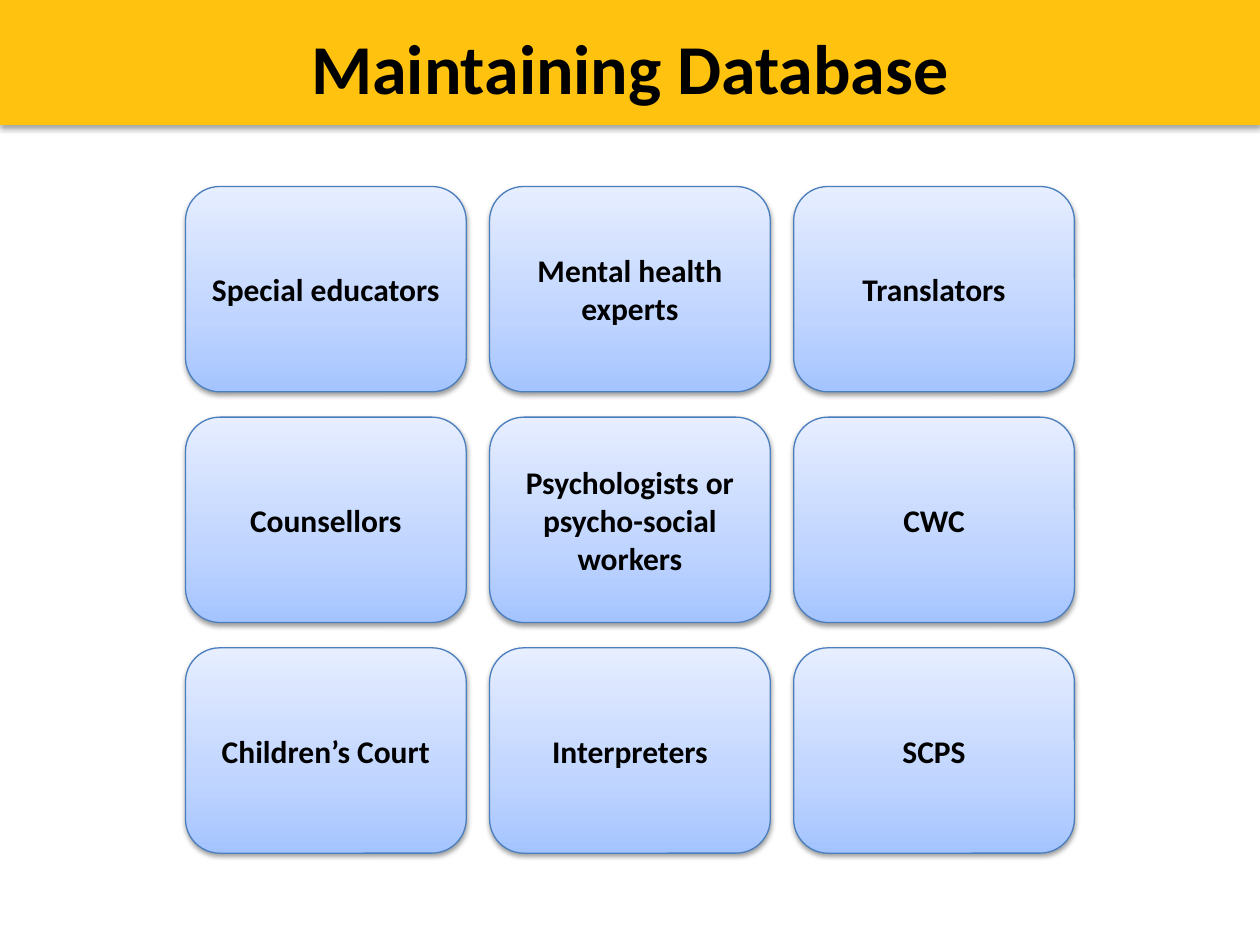
from lxml.etree import SubElement
from pptx import Presentation
from pptx.dml.color import RGBColor
from pptx.enum.shapes import MSO_SHAPE
from pptx.enum.text import MSO_ANCHOR, PP_ALIGN
from pptx.oxml.ns import qn
from pptx.util import Cm, Pt

TITLE = "Maintaining Database"
GROUPS = [
    ["Special educators", "Mental health experts", "Translators"],
    ["Counsellors", "Psychologists or psycho-social workers", "CWC"],
    ["Children’s Court", "Interpreters", "SCPS"],
]
COLORS = {"banner": "FFC20E", "border": "4B7EBC", "text": "000000", "shadow": "000000"}
GRADIENT = [(0, "A4C4FF"), (35, "BFD4FF"), (100, "E6EEFF")]
SLIDE_W, SLIDE_H = 25.4, 19.05
CARD_W, CARD_H = 5.66, 4.14
STEP_X, STEP_Y = 6.13, 4.65
TOP = 3.76


def rgb(name):
    return RGBColor.from_string(COLORS[name])


def write(sp, text, size=18, anchor=MSO_ANCHOR.MIDDLE):
    tf = sp.text_frame
    tf.word_wrap = True
    tf.vertical_anchor = anchor
    p = tf.paragraphs[0]
    p.alignment = PP_ALIGN.CENTER
    r = p.add_run()
    r.text = text
    r.font.name, r.font.size, r.font.bold = "Calibri", Pt(size), True
    r.font.color.rgb = rgb("text")


def add_color(parent, value):
    return SubElement(parent, qn("a:srgbClr"), val=value)


def add_shadow(sp, alpha, dist):
    sp.shadow.inherit = False
    effects = sp._element.spPr.find(qn("a:effectLst"))
    outer = SubElement(effects, qn("a:outerShdw"), blurRad=str(Pt(3.1)),
                       dist=str(Pt(dist)), dir="5400000", rotWithShape="0")
    SubElement(add_color(outer, COLORS["shadow"]), qn("a:alpha"), val=str(alpha * 1000))


def fill_gradient(sp):
    sp.fill.gradient()
    sp.fill.gradient_angle = 90
    stops = sp._element.spPr.find(qn("a:gradFill")).find(qn("a:gsLst"))
    for stop in list(stops):
        stops.remove(stop)
    for pos, value in GRADIENT:
        add_color(SubElement(stops, qn("a:gs"), pos=str(pos * 1000)), value)


def add_card(slide, text, left, top):
    sp = slide.shapes.add_shape(MSO_SHAPE.ROUNDED_RECTANGLE, Cm(left), Cm(top),
                                Cm(CARD_W), Cm(CARD_H))
    fill_gradient(sp)
    sp.line.color.rgb = rgb("border")
    sp.line.width = Pt(0.75)
    add_shadow(sp, 38, 1.6)
    write(sp, text)


def main():
    """Build the slide with a title banner and a grid of cards."""
    prs = Presentation()
    prs.slide_width, prs.slide_height = Cm(SLIDE_W), Cm(SLIDE_H)
    slide = prs.slides.add_slide(prs.slide_layouts[6])

    banner = slide.shapes.add_shape(MSO_SHAPE.RECTANGLE, 0, 0, Cm(SLIDE_W), Cm(2.52))
    banner.fill.solid()
    banner.fill.fore_color.rgb = rgb("banner")
    banner.line.fill.background()
    add_shadow(banner, 35, 1.8)
    title = slide.shapes.add_textbox(0, Cm(0.38), Cm(SLIDE_W), Cm(1.7))
    write(title, TITLE, size=40, anchor=MSO_ANCHOR.TOP)

    left = (SLIDE_W - 2 * STEP_X - CARD_W) / 2
    for row, names in enumerate(GROUPS):
        for col, name in enumerate(names):
            add_card(slide, name, left + col * STEP_X, TOP + row * STEP_Y)
    prs.save("out.pptx")


if __name__ == "__main__":
    main()
